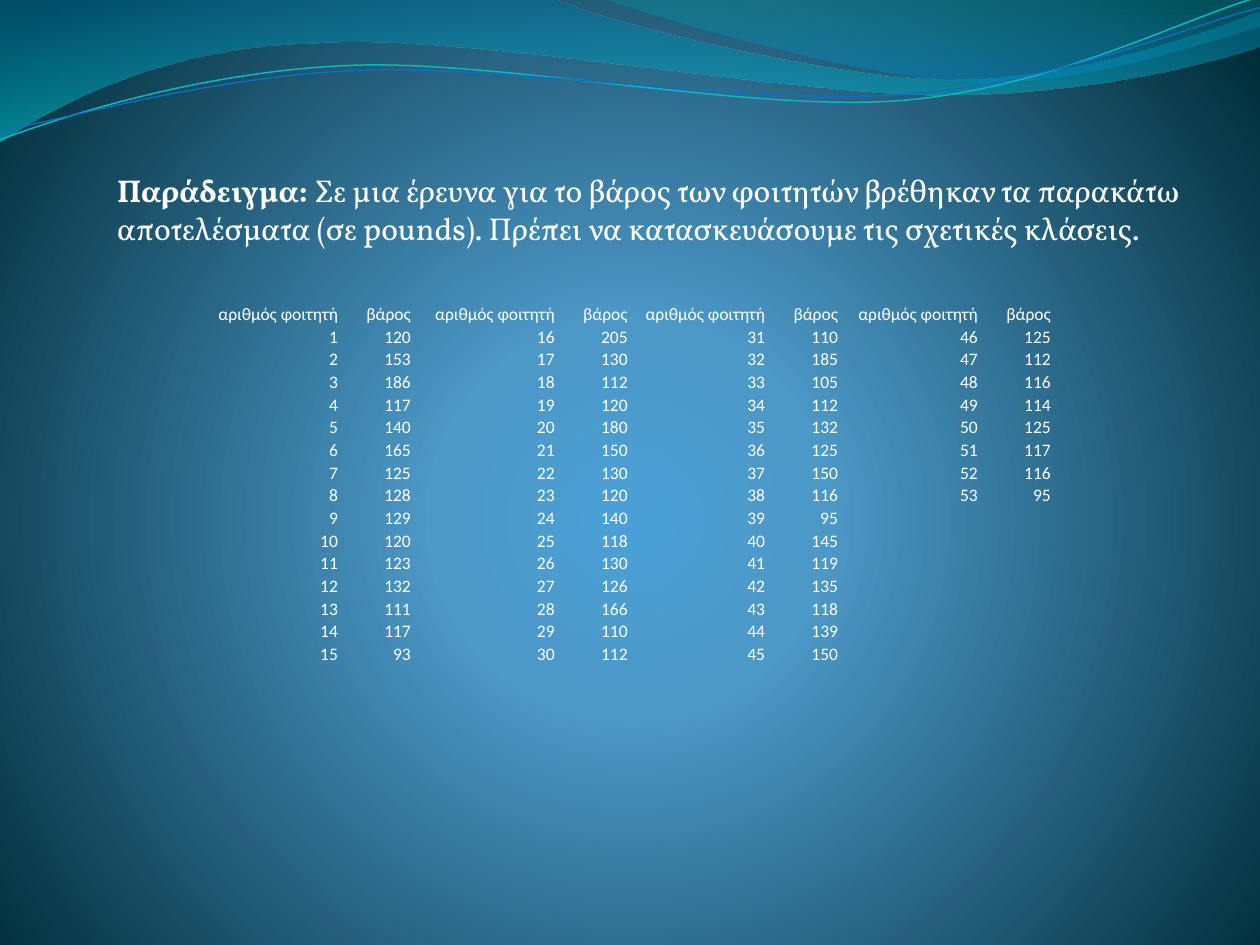
from lxml.etree import SubElement
from pptx import Presentation
from pptx.dml.color import RGBColor
from pptx.enum.text import MSO_ANCHOR, PP_ALIGN
from pptx.oxml.ns import qn
from pptx.util import Cm, Pt

# Content
LEAD = "Παράδειγμα: "
BODY = ("Σε μια έρευνα για το βάρος των φοιτητών βρέθηκαν τα παρακάτω "
        "αποτελέσματα (σε pounds). Πρέπει να κατασκευάσουμε τις σχετικές κλάσεις.")
HEADERS = ("αριθμός φοιτητή", "βάρος")
WEIGHTS = [
    120, 153, 186, 117, 140, 165, 125, 128, 129, 120, 123, 132, 111, 117, 93,
    205, 130, 112, 120, 180, 150, 130, 120, 140, 118, 130, 126, 166, 110, 112,
    110, 185, 105, 112, 132, 125, 150, 116, 95, 145, 119, 135, 118, 139, 150,
    125, 112, 116, 114, 125, 117, 116, 95,
]
PER_BLOCK = 15
TOP_ROWS = 2  # an empty row, then the header row
NUMBER_WIDTHS = (2.59, 2.9, 2.77, 2.82)
WEIGHT_WIDTH = 1.47
TABLE_HEIGHT = 7.77

THEME = {
    "text": RGBColor(0xFF, 0xFF, 0xFF),
    "body_font": "Vollkorn", "body_size": Pt(18),
    "table_font": "Calibri", "table_size": Pt(10),
    # Gradient stops: position %, colour, opacity %
    "background": [(0, "4AA0D6", 100), (25, "4C98C7", 100), (100, "002C38", 100)],
    "wide_wave": [(0, "0074A1", 45), (100, "00C6CF", 55)],
    "right_wave": [(0, "00A1A9", 30), (80, "008BBF", 45)],
    "teal_line": RGBColor(0x0A, 0xB8, 0xBF),
    "blue_line": RGBColor(0x0F, 0x6F, 0xC6),
}
NO_STYLE = "{2D5ABB26-0587-4C30-8999-92F81FD0307C}"

# Waves in thousandths of the slide width: a start point, then segments of
# one point (straight) or three points (Bézier curve)
WIDE_WAVE = ((0, 0), [
    [(440, -1)],
    [(476, 17), (664, 63), (758, 63)],
    [(853, 63), (958, 26), (1000, 9)],
    [(1001, 36)],
    [(983, 44), (870, 76), (746, 75)],
    [(622, 75), (382, 28), (257, 34)],
    [(129, 36), (46, 83), (-1, 113)],
    [(0, 0)],
])
RIGHT_WAVE = ((479, -1), [
    [(509, 11), (682, 62), (769, 65)],
    [(856, 69), (961, 32), (1000, 21)],
    [(1000, 0)],
    [(479, -1)],
])
TEAL_LINE = ((0, 111), [
    [(48, 93), (158, 57), (277, 52)],
    [(395, 47), (593, 89), (713, 80)],
    [(833, 71), (938, 15), (998, -2)],
])
BLUE_LINE = ((0, 104), [
    [(47, 96), (164, 61), (283, 56)],
    [(403, 51), (597, 84), (717, 75)],
    [(836, 67), (941, 21), (1000, 6)],
])


def set_gradient(element, stops, shade, attrs, rect=None):
    """Swap the first solid fill in element for a gradient."""
    solid = element.xpath(".//a:solidFill")[0]
    grad = solid.makeelement(qn("a:gradFill"), {"rotWithShape": "1"})
    gs_list = SubElement(grad, qn("a:gsLst"))
    for pos, color, opacity in stops:
        gs = SubElement(gs_list, qn("a:gs"), pos=str(pos * 1000))
        clr = SubElement(gs, qn("a:srgbClr"), val=color)
        if opacity < 100:
            SubElement(clr, qn("a:alpha"), val=str(opacity * 1000))
    direction = SubElement(grad, qn(shade), attrs)
    if rect:
        SubElement(direction, qn("a:fillToRect"), rect)
    solid.getparent().replace(solid, grad)


def add_curve(slide, outline, closed):
    """Draw a freeform, turning each three-point segment into a Bézier curve."""
    (x, y), segments = outline
    builder = slide.shapes.build_freeform(x, y, scale=Cm(25.4) / 1000)
    builder.add_line_segments([pt for seg in segments for pt in seg], close=closed)
    sp = builder.convert_to_shape()
    sp.shadow.inherit = False
    lines = iter(sp._element.xpath(".//a:lnTo"))
    for seg in segments:
        group = [next(lines) for _ in seg]
        if len(group) == 3:
            curve = group[0].makeelement(qn("a:cubicBezTo"))
            group[0].addprevious(curve)
            for line in group:
                curve.append(line[0])
                line.getparent().remove(line)
    return sp


def style_font(font, name, size):
    font.name, font.size = name, size
    font.color.rgb = THEME["text"]


def add_heading(slide):
    tf = slide.shapes.add_textbox(Cm(2.11), Cm(3.33), Cm(22.6), Cm(7.19)).text_frame
    tf.word_wrap = True
    p = tf.paragraphs[0]
    style_font(p.font, THEME["body_font"], THEME["body_size"])
    for text, bold in ((LEAD, True), (BODY, False)):
        r = p.add_run()
        r.text = text
        r.font.bold = bold


def cell_text(row, col):
    block, is_weight = divmod(col, 2)
    if row < TOP_ROWS:
        return HEADERS[is_weight] if row == 1 else ""
    index = block * PER_BLOCK + row - TOP_ROWS
    if index >= len(WEIGHTS):
        return ""
    return str(WEIGHTS[index] if is_weight else index + 1)


def add_weights_table(slide):
    widths = [w for number in NUMBER_WIDTHS for w in (number, WEIGHT_WIDTH)]
    n_rows = TOP_ROWS + PER_BLOCK
    frame = slide.shapes.add_table(n_rows, len(widths), Cm(4.24), Cm(5.64),
                                   Cm(sum(widths)), Cm(TABLE_HEIGHT))
    table = frame.table
    table.first_row = table.horz_banding = False
    table._tbl.tblPr.find(qn("a:tableStyleId")).text = NO_STYLE
    for column, width in zip(table.columns, widths):
        column.width = Cm(width)
    for i, row in enumerate(table.rows):
        row.height = Cm(TABLE_HEIGHT / n_rows)
        for j, cell in enumerate(row.cells):
            cell.fill.background()
            cell.margin_left = cell.margin_right = cell.margin_top = Cm(0.02)
            cell.margin_bottom = 0
            cell.vertical_anchor = MSO_ANCHOR.BOTTOM
            cell.text = cell_text(i, j)
            p = cell.text_frame.paragraphs[0]
            p.alignment = PP_ALIGN.RIGHT
            style_font(p.font, THEME["table_font"], THEME["table_size"])
            if not cell.text:  # keeps empty cells as low as the others
                SubElement(p._p, qn("a:endParaRPr"), sz="1000")


def main():
    prs = Presentation()
    prs.slide_width, prs.slide_height = Cm(25.4), Cm(19.05)
    slide = prs.slides.add_slide(prs.slide_layouts[6])

    # Background
    slide.background.fill.solid()
    set_gradient(slide._element, THEME["background"], "a:path", {"path": "circle"},
                 {"l": "10000", "t": "110000", "r": "10000", "b": "100000"})

    # Waves and lines along the top
    for outline, stops in ((WIDE_WAVE, "wide_wave"), (RIGHT_WAVE, "right_wave")):
        sp = add_curve(slide, outline, True)
        sp.line.fill.background()
        sp.fill.solid()
        set_gradient(sp._element, THEME[stops], "a:lin", {"ang": "5400000", "scaled": "1"})
    for outline, color, width in ((TEAL_LINE, "teal_line", 0.85),
                                  (BLUE_LINE, "blue_line", 0.75)):
        sp = add_curve(slide, outline, False)
        sp.fill.background()
        sp.line.color.rgb = THEME[color]
        sp.line.width = Pt(width)

    # Text and table
    add_heading(slide)
    add_weights_table(slide)
    prs.save("out.pptx")


if __name__ == "__main__":
    main()
